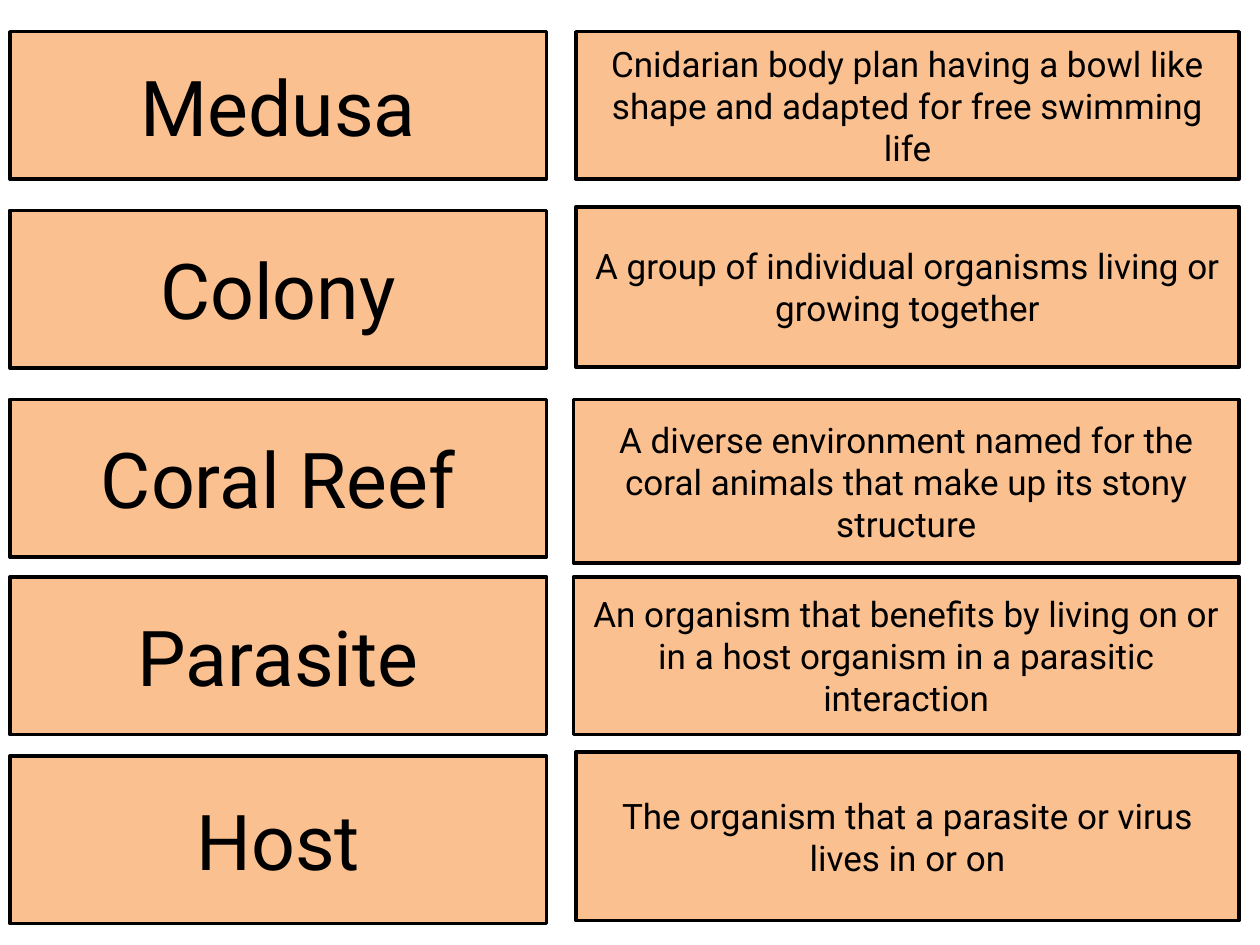
from dataclasses import dataclass

from pptx import Presentation
from pptx.dml.color import RGBColor
from pptx.enum.shapes import MSO_SHAPE as Shape
from pptx.enum.text import MSO_ANCHOR as Anchor, PP_ALIGN as Align
from pptx.slide import Slide
from pptx.util import Cm, Pt

COLORS = {"card": "FAC090", "ink": "000000"}
INK = RGBColor.from_string(COLORS["ink"])
TERM_LEFT, TERM_WIDTH = 0.2, 10.82
DEFINITION_RIGHT = 24.98
TERM_SIZE, DEFINITION_SIZE = 44, 20


@dataclass
class Entry:
    """A term and its definition; lengths in cm."""
    term: str
    term_top: float
    term_height: float
    definition: str
    definition_left: float
    definition_top: float
    definition_height: float


ENTRIES = [
    Entry("Medusa", 0.64, 2.97,
          "Cnidarian body plan having a bowl like shape and adapted for free swimming life",
          11.61, 0.64, 2.97),
    Entry("Colony", 4.24, 3.18,
          "A group of individual organisms living or growing together",
          11.61, 4.17, 3.23),
    Entry("Coral Reef", 8.05, 3.18,
          "A diverse environment named for the coral animals that make up its stony structure",
          11.56, 8.05, 3.3),
    Entry("Parasite", 11.63, 3.18,
          "An organism that benefits by living on or in a host organism in a parasitic interaction",
          11.56, 11.63, 3.18),
    Entry("Host", 15.24, 3.38,
          "The organism that a parasite or virus lives in or on",
          11.61, 15.16, 3.4),
]


def draw_card(slide: Slide, wording: str, size: int,
              left: float, top: float, width: float, height: float) -> None:
    card = slide.shapes.add_shape(Shape.FLOWCHART_PROCESS,
                                  Cm(left), Cm(top), Cm(width), Cm(height))
    card.shadow.inherit = False
    card.fill.solid()
    card.fill.fore_color.rgb = RGBColor.from_string(COLORS["card"])
    card.line.color.rgb = INK
    card.line.width = Pt(2)

    frame = card.text_frame
    frame.word_wrap = True
    frame.vertical_anchor = Anchor.MIDDLE
    paragraph = frame.paragraphs[0]
    paragraph.alignment = Align.CENTER
    run = paragraph.add_run()
    run.text = wording
    for name, value in {"name": "Roboto", "size": Pt(size)}.items():
        setattr(run.font, name, value)
    run.font.color.rgb = INK


def draw_entry(slide: Slide, entry: Entry) -> None:
    draw_card(slide, entry.term, TERM_SIZE,
              TERM_LEFT, entry.term_top, TERM_WIDTH, entry.term_height)
    draw_card(slide, entry.definition, DEFINITION_SIZE,
              entry.definition_left, entry.definition_top,
              DEFINITION_RIGHT - entry.definition_left, entry.definition_height)


def main() -> None:
    deck = Presentation()
    deck.slide_width, deck.slide_height = Cm(25.4), Cm(19.05)
    slide = deck.slides.add_slide(deck.slide_layouts[6])
    for entry in ENTRIES:
        draw_entry(slide, entry)
    deck.save("out.pptx")


if __name__ == "__main__":
    main()
